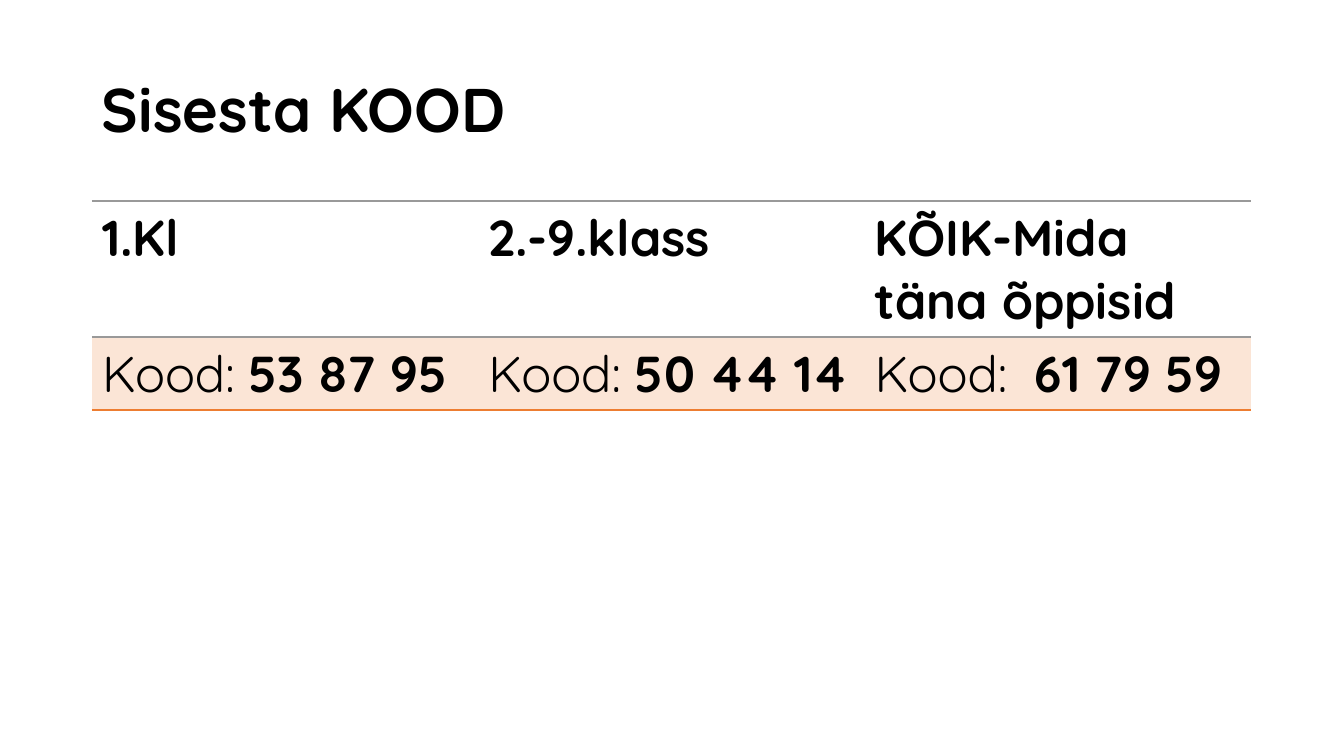
from lxml.etree import SubElement
from pptx import Presentation
from pptx.dml.color import RGBColor
from pptx.enum.text import MSO_ANCHOR
from pptx.oxml.ns import qn
from pptx.util import Pt

# Content: each text is a list of (words, bold) runs
TITLE = [("Sisesta KOOD", True)]
GROUPS = [
    ("1.Kl", "Kood: ", "53 87 95"),
    ("2.-9.klass", "Kood: ", "50 44 14"),
    ("KÕIK-Mida täna õppisid", "Kood:  ", "61 79 59"),
]

FONT = "Quicksand"
BLACK = RGBColor(0x00, 0x00, 0x00)
GREY = RGBColor(0x99, 0x99, 0x99)
ORANGE = RGBColor(0xED, 0x7D, 0x31)
PEACH = RGBColor(0xFB, 0xE5, 0xD6)

# Layout in px
SCALE = 914400 / 100.8
LEFT, WIDTH = 92, 1159
TITLE_TOP, TITLE_HEIGHT = 40, 146
TABLE_TOP = 201
COLUMN_WIDTH = WIDTH / len(GROUPS)
ROW_HEIGHTS = [136, 73]


def px(length):
    return round(length * SCALE)


def write(frame, runs, size, color=BLACK, spacing=None):
    paragraph = frame.paragraphs[0]
    paragraph.line_spacing = spacing
    for words, bold in runs:
        run = paragraph.add_run()
        run.text = words
        run.font.name = FONT
        run.font.size = Pt(size)
        run.font.bold = bold
        run.font.color.rgb = color


def set_borders(cell, top, bottom):
    properties = cell._tc.get_or_add_tcPr()
    for side, color in (("L", None), ("R", None), ("T", top), ("B", bottom)):
        line = SubElement(properties, qn(f"a:ln{side}"), w=str(Pt(1)))
        if color is None:
            SubElement(line, qn("a:noFill"))
        else:
            fill = SubElement(line, qn("a:solidFill"))
            SubElement(fill, qn("a:srgbClr"), val=str(color))


presentation = Presentation()
presentation.slide_width, presentation.slide_height = px(1344), px(756)
slide = presentation.slides.add_slide(presentation.slide_layouts[6])

# Title
heading = slide.shapes.add_textbox(
    px(LEFT), px(TITLE_TOP), px(WIDTH), px(TITLE_HEIGHT)).text_frame
heading.word_wrap = True
heading.vertical_anchor = MSO_ANCHOR.MIDDLE
write(heading, TITLE, 44, spacing=0.9)

# Table of codes
codes = slide.shapes.add_table(
    len(ROW_HEIGHTS), len(GROUPS),
    px(LEFT), px(TABLE_TOP), px(WIDTH), px(sum(ROW_HEIGHTS))).table
codes.first_row = codes.horz_banding = False
for row, height in zip(codes.rows, ROW_HEIGHTS):
    row.height = px(height)

for index, (group, label, code) in enumerate(GROUPS):
    codes.columns[index].width = px(COLUMN_WIDTH)
    group_cell, code_cell = codes.cell(0, index), codes.cell(1, index)
    write(group_cell.text_frame, [(group, True)], 36)
    write(code_cell.text_frame, [(label, False), (code, True)], 36)
    set_borders(group_cell, GREY, GREY)
    set_borders(code_cell, GREY, ORANGE)
    group_cell.fill.background()
    code_cell.fill.solid()
    code_cell.fill.fore_color.rgb = PEACH

presentation.save("out.pptx")
